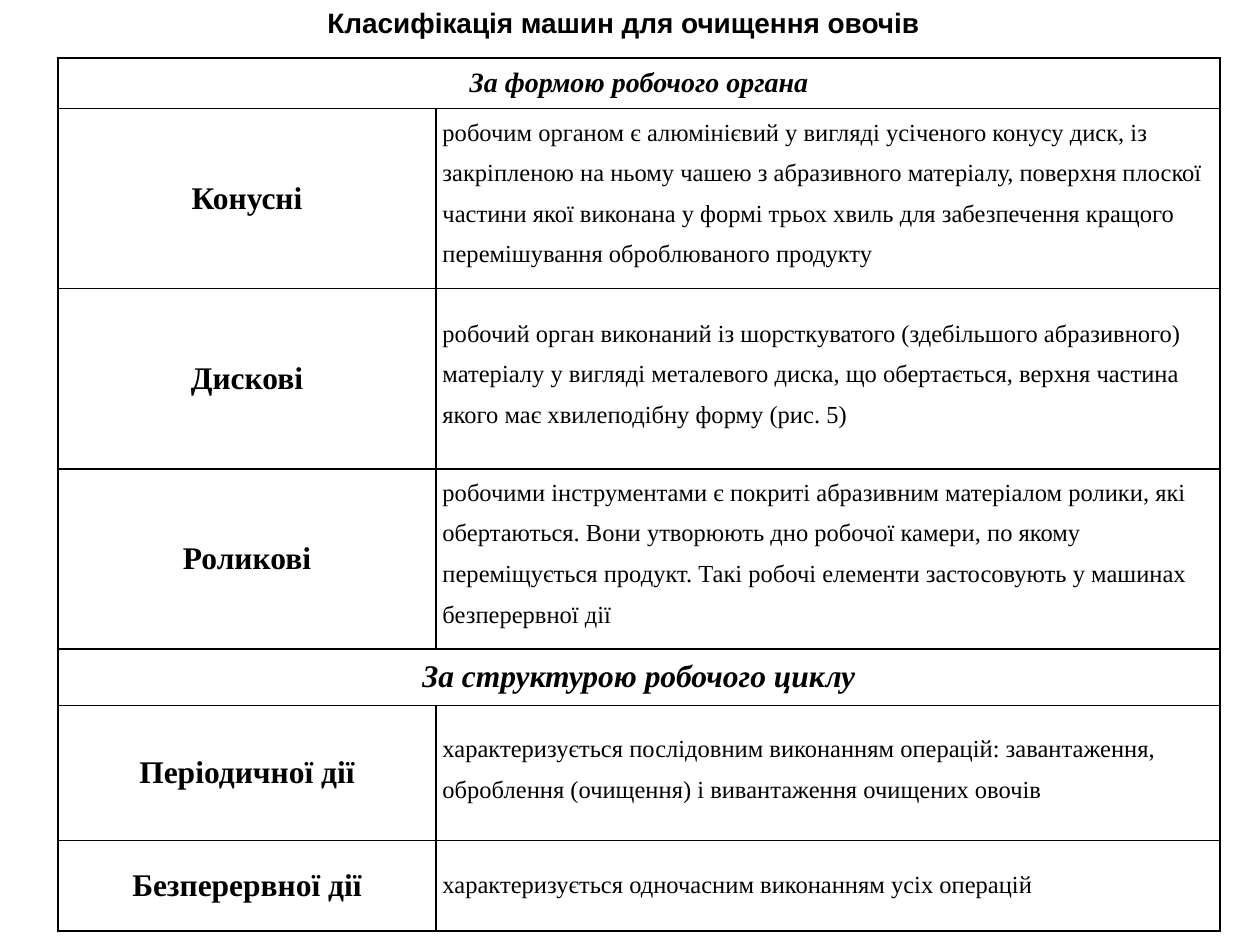
from lxml import etree
from pptx import Presentation
from pptx.dml.color import RGBColor
from pptx.enum.text import MSO_ANCHOR, MSO_AUTO_SIZE, PP_ALIGN
from pptx.oxml.ns import qn
from pptx.util import Cm, Pt

LEFT, CENTER = PP_ALIGN.LEFT, PP_ALIGN.CENTER
TOP, MIDDLE = MSO_ANCHOR.TOP, MSO_ANCHOR.MIDDLE
NO_AUTOFIT = MSO_AUTO_SIZE.NONE

TITLE = "Класифікація машин для очищення овочів"
COLS = [7.62, 15.8]
ROWS = [
    (1.02, "За формою робочого органа", 16, None, 0),
    (3.63, "Конусні", 18, [
        ("робочим органом є алюмінієвий у вигляді усіченого конусу диск, із", 1),
        ("закріпленою на ньому чашею з абразивного матеріалу, поверхня плоскої "
         "частини якої виконана у формі трьох хвиль для забезпечення кращого "
         "перемішування оброблюваного продукту", 1.5)], 0.2),
    (3.63, "Дискові", 18, [
        ("робочий орган виконаний із шорсткуватого (здебільшого абразивного) "
         "матеріалу у вигляді металевого диска, що обертається, верхня частина "
         "якого має хвилеподібну форму (рис. 5)", 1.5)], 0.45),
    (3.63, "Роликові", 18, [
        ("робочими інструментами є покриті абразивним матеріалом ролики, які", 1),
        ("обертаються. Вони утворюють дно робочої камери, по якому "
         "переміщується продукт. Такі робочі елементи застосовують у машинах "
         "безперервної дії", 1.5)], 0.2),
    (1.14, "За структурою робочого циклу", 18, None, 0),
    (2.72, "Періодичної дії", 18, [
        ("характеризується послідовним виконанням операцій: завантаження, "
         "оброблення (очищення) і вивантаження очищених овочів", 1.5)], 0.4),
    (1.83, "Безперервної дії", 18, [
        ("характеризується одночасним виконанням усіх операцій", 1)], 0),
]


def rgb(value):
    return RGBColor.from_string(value)


class SlideBuilder:
    ink = "000000"
    heading_font = "Arial"
    body_font = "Times New Roman"

    def __init__(self, prs):
        self.s = prs.slides.add_slide(prs.slide_layouts[5])

    def run(self, p, text, size, font, bold=False, italic=False):
        r = p.add_run()
        r.text = text
        r.font.name, r.font.size = font, Pt(size)
        r.font.bold, r.font.italic = bold, italic
        r.font.color.rgb = rgb(self.ink)

    def title(self, text, left, top, width, height):
        sp = self.s.shapes.title
        sp.left, sp.top = Cm(left), Cm(top)
        sp.width, sp.height = Cm(width), Cm(height)
        tf = sp.text_frame
        tf.auto_size, tf.word_wrap = NO_AUTOFIT, True
        tf.vertical_anchor = TOP
        tf.margin_left = tf.margin_right = tf.margin_bottom = 0
        tf.margin_top = Cm(0.03)
        p = tf.paragraphs[0]
        p.alignment, p.space_before = LEFT, Pt(1)
        self.run(p, text, 16, self.heading_font, bold=True)

    def borders(self, cell, bottom):
        tcPr = cell._tc.get_or_add_tcPr()
        for side, width in (("L", 1), ("R", 1), ("T", 1), ("B", bottom)):
            ln = etree.SubElement(tcPr, qn(f"a:ln{side}"), w=str(Pt(width)))
            fill = etree.SubElement(ln, qn("a:solidFill"))
            etree.SubElement(fill, qn("a:srgbClr"), val=self.ink)

    def label(self, cell, text, size, italic):
        p = cell.text_frame.paragraphs[0]
        p.alignment = CENTER
        self.run(p, text, size, self.body_font, bold=True, italic=italic)

    def description(self, cell, paragraphs, bottom):
        cell.margin_left, cell.margin_bottom = Cm(0.13), Cm(bottom)
        tf = cell.text_frame
        for i, (text, spacing) in enumerate(paragraphs):
            p = tf.add_paragraph() if i else tf.paragraphs[0]
            p.alignment, p.line_spacing = LEFT, spacing
            self.run(p, text, 14, self.body_font)

    def table(self, rows, cols, left, top):
        height = sum(row[0] for row in rows)
        frame = self.s.shapes.add_table(
            len(rows), len(cols), Cm(left), Cm(top), Cm(sum(cols)), Cm(height))
        tbl = frame.table
        tbl.first_row = tbl.horz_banding = False
        for col, width in zip(tbl.columns, cols):
            col.width = Cm(width)
        for i, (height, label, size, paragraphs, bottom) in enumerate(rows):
            tbl.rows[i].height = Cm(height)
            first, second = tbl.cell(i, 0), tbl.cell(i, 1)
            for cell in (first, second):
                cell.margin_left = cell.margin_right = 0
                cell.margin_top = cell.margin_bottom = 0
                cell.vertical_anchor = MIDDLE
                self.borders(cell, 1.5 if i == len(rows) - 1 else 1)
                cell.fill.background()
            self.label(first, label, size, italic=paragraphs is None)
            if paragraphs:
                self.description(second, paragraphs, bottom)
            else:
                first.merge(second)


def main():
    prs = Presentation()
    prs.slide_width, prs.slide_height = Cm(25.4), Cm(19.05)
    slide = SlideBuilder(prs)
    slide.table(ROWS, COLS, 1.17, 1.17)
    slide.title(TITLE, 6.6, 0.08, 12.22, 0.76)
    prs.save("out.pptx")


if __name__ == "__main__":
    main()
